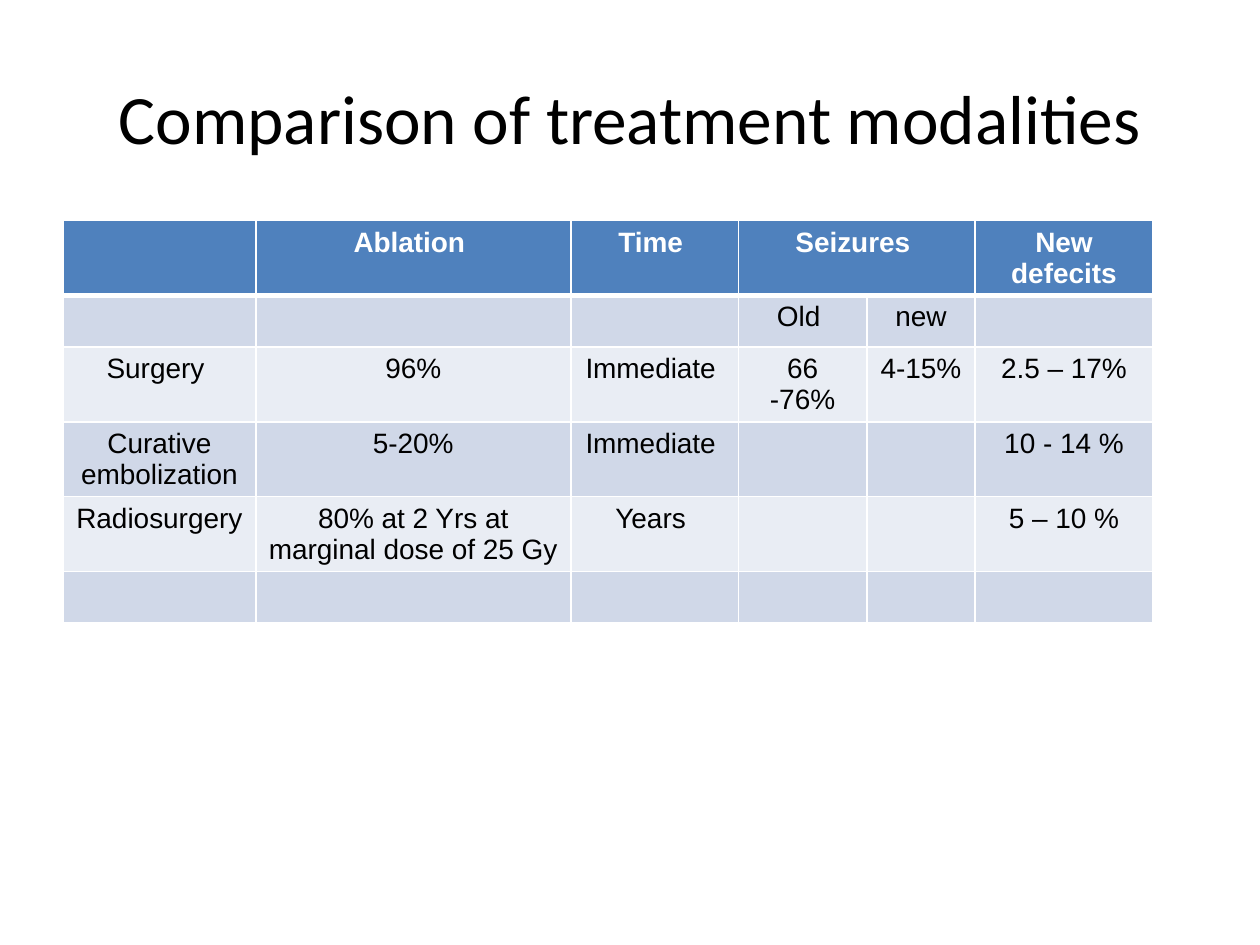
from lxml import etree
from pptx import Presentation
from pptx.dml.color import RGBColor
from pptx.enum.text import MSO_ANCHOR, PP_ALIGN
from pptx.oxml.ns import qn
from pptx.util import Inches, Pt

BLACK = RGBColor(0x00, 0x00, 0x00)
WHITE = RGBColor(0xFF, 0xFF, 0xFF)
HEADER_BLUE = RGBColor(0x4F, 0x81, 0xBD)
BAND_DARK = RGBColor(0xD0, 0xD8, 0xE8)
BAND_LIGHT = RGBColor(0xE9, 0xED, 0xF4)

COLUMN_WIDTHS = [1.53, 2.5, 1.33, 1.02, 0.86, 1.41]
ROW_HEIGHT = 0.41
ROWS = [
    ["", "Ablation ", "Time ", "Seizures ", "", "New defecits"],
    ["", "", "", "Old ", "new", ""],
    ["Surgery ", "96%", "Immediate ", "66 -76%", "4-15%", "2.5 – 17%"],
    ["Curative embolization", "5-20%", "Immediate ", "", "", "10 - 14 %"],
    ["Radiosurgery ", "80% at 2 Yrs at marginal dose of 25 Gy", "Years ", "", "", "5 – 10 %"],
    [""] * len(COLUMN_WIDTHS),
]


def format_text(text_frame, font_name, size, color, bold=False):
    for paragraph in text_frame.paragraphs:
        paragraph.alignment = PP_ALIGN.CENTER
        for run in paragraph.runs:
            run.font.name = font_name
            run.font.size = Pt(size)
            run.font.color.rgb = color
            run.font.bold = bold


def set_borders(cell, top, bottom):
    """Draw white cell borders; top and bottom are widths in points."""
    properties = cell._tc.get_or_add_tcPr()
    widths = {"a:lnL": 1, "a:lnR": 1, "a:lnT": top, "a:lnB": bottom}
    for position, (tag, width) in enumerate(widths.items()):
        line = etree.Element(qn(tag), w=str(Pt(width)))
        fill = etree.SubElement(line, qn("a:solidFill"))
        etree.SubElement(fill, qn("a:srgbClr"), val=str(WHITE))
        properties.insert(position, line)


def place_title(slide, left, top, width, height):
    title = slide.shapes.title
    title.left, title.top = left, top
    title.width, title.height = width, height
    title.text_frame.text = "Comparison of treatment modalities"
    title.text_frame.vertical_anchor = MSO_ANCHOR.MIDDLE
    format_text(title.text_frame, "Calibri", 39.6, BLACK)


def add_comparison_table(slide, left, top):
    table = slide.shapes.add_table(
        len(ROWS), len(COLUMN_WIDTHS), left, top,
        Inches(sum(COLUMN_WIDTHS)), Inches(ROW_HEIGHT * len(ROWS))).table
    for column, width in zip(table.columns, COLUMN_WIDTHS):
        column.width = Inches(width)

    for row_index, texts in enumerate(ROWS):
        table.rows[row_index].height = Inches(ROW_HEIGHT)
        is_header = row_index == 0
        band = BAND_DARK if row_index % 2 else BAND_LIGHT
        for column_index, text in enumerate(texts):
            cell = table.cell(row_index, column_index)
            cell.fill.solid()
            cell.fill.fore_color.rgb = HEADER_BLUE if is_header else band
            set_borders(cell, top=3 if row_index == 1 else 1, bottom=3 if is_header else 1)
            if text:
                cell.text_frame.text = text
                format_text(cell.text_frame, "Arial", 16, WHITE if is_header else BLACK, is_header)

    seizures = ROWS[0].index("Seizures ")
    table.cell(0, seizures).merge(table.cell(0, seizures + 1))


def main():
    presentation = Presentation()
    presentation.slide_width = Inches(10)
    presentation.slide_height = Inches(7.5)
    title_only = presentation.slide_layouts.get_by_name("Title Only")
    slide = presentation.slides.add_slide(title_only)
    place_title(slide, Inches(0.5), Inches(0.3), Inches(9), Inches(1.25))
    add_comparison_table(slide, Inches(0.5), Inches(1.75))
    presentation.save("out.pptx")


if __name__ == "__main__":
    main()
